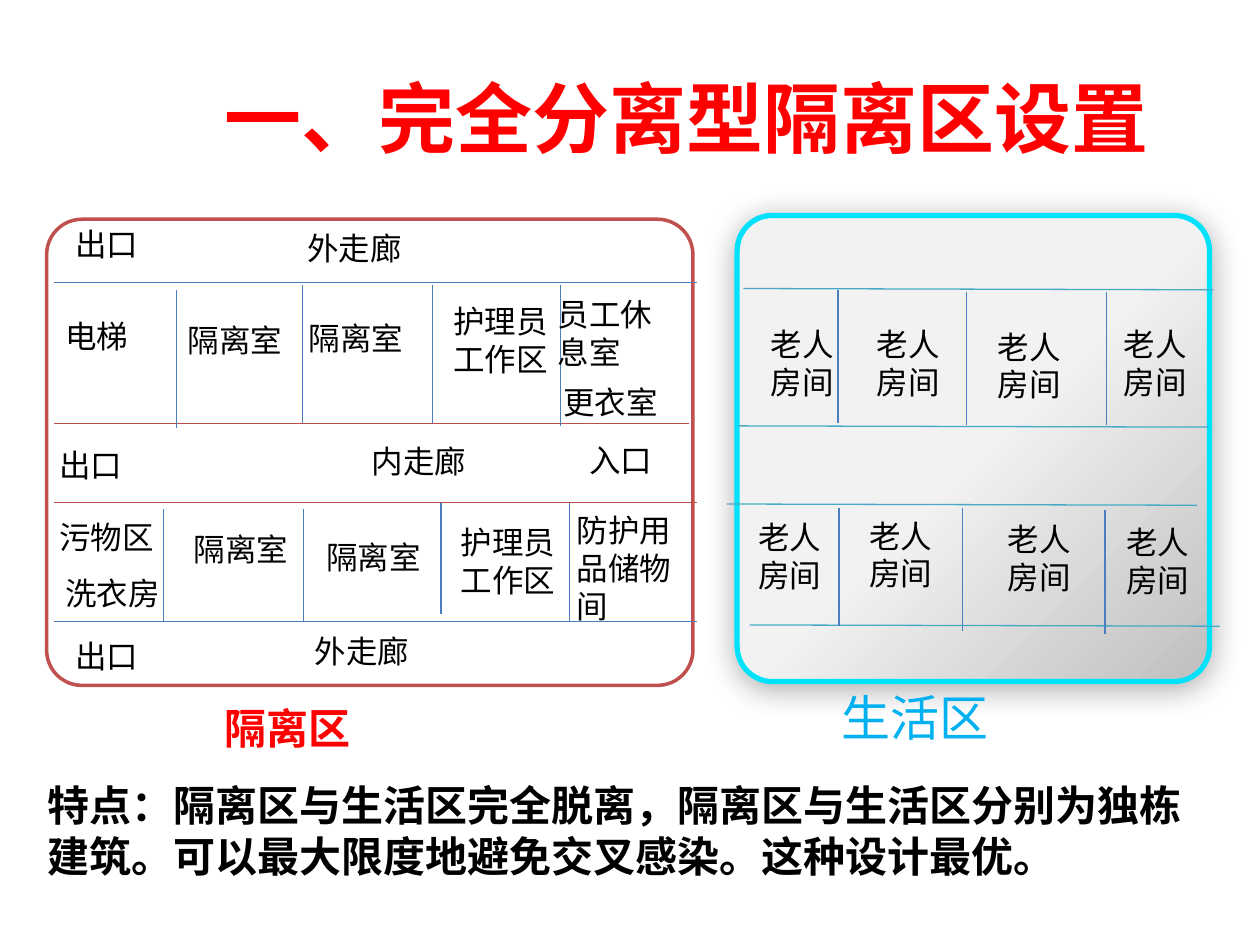
from dataclasses import dataclass
from typing import Any

from lxml.etree import SubElement
from pptx import Presentation
from pptx.dml.color import RGBColor
from pptx.enum.shapes import MSO_CONNECTOR, MSO_SHAPE
from pptx.enum.text import MSO_ANCHOR, MSO_AUTO_SIZE, PP_ALIGN
from pptx.oxml.ns import qn
from pptx.util import Inches, Length, Pt

COLUMNS, ROWS = 100, 75
SLIDE_WIDTH, SLIDE_HEIGHT = Inches(10), Inches(7.5)

BLACK = RGBColor(0x00, 0x00, 0x00)
WHITE = RGBColor(0xFF, 0xFF, 0xFF)
RED = RGBColor(0xFF, 0x00, 0x00)
SKY = RGBColor(0x00, 0xB0, 0xF0)
CYAN = RGBColor(0x00, 0xE1, 0xFB)
BRICK = RGBColor(0xC0, 0x50, 0x4D)
BRICK_WALL = RGBColor(0xBF, 0x4C, 0x48)
BLUE_WALL = RGBColor(0x4B, 0x7E, 0xBC)
TEAL_WALL = RGBColor(0x46, 0xAA, 0xC5)
PALE_GREY = RGBColor(0xF2, 0xF2, 0xF2)
MID_GREY = RGBColor(0xBF, 0xBF, 0xBF)


@dataclass(frozen=True)
class Label:
    """Text placed on the grid; a line break starts a new paragraph."""
    text: str
    column: float
    row: float
    width: float = 10.2
    height: float = 4
    size: float = 18
    color: RGBColor = BLACK
    bold: bool = False
    font: str = "Arial"


@dataclass(frozen=True)
class Wall:
    column: float
    row: float
    end_column: float
    end_row: float
    color: RGBColor = BLUE_WALL


@dataclass(frozen=True)
class Zone:
    column: float
    row: float
    width: float
    height: float
    border: RGBColor
    border_points: float


TITLE = Label("一、完全分离型隔离区设置", 14.1, 3, 80.9, 12.5, 44, RED, True, "Calibri")
FEATURES = Label(
    "特点：隔离区与生活区完全脱离，隔离区与生活区分别为独栋建筑。"
    "可以最大限度地避免交叉感染。这种设计最优。",
    2.8, 61.4, 93.2, 9.1, 24, BLACK, True)
ZONE_NAMES = [
    Label("生活区", 65.8, 54.1, 23.9, 5.7, 28, SKY),
    Label("隔离区", 16.8, 55.3, 23.9, 5, 24, RED, True),
]

LIVING = Zone(58.5, 17.1, 37.5, 37, CYAN, 3)
ISOLATION = Zone(3.7, 17.4, 51.3, 37, BRICK, 2)

ISOLATION_WALLS = [
    Wall(4.3, 33.6, 54.7, 33.6, BRICK_WALL),
    Wall(4.3, 39.9, 55.3, 39.9, BRICK_WALL),
    *(Wall(4.3, row, 55.3, row) for row in (22.4, 49.3)),
    *(Wall(column, top, column, bottom) for column, top, bottom in (
        (14, 23, 34), (24, 22.6, 33.6), (34.3, 22.6, 33.6), (44.5, 22.6, 33.8),
        (13, 40.4, 49.3), (24.1, 40.4, 49.3), (35, 39.9, 48.7), (45.2, 39.9, 49.3))),
]
ISOLATION_LABELS = [
    Label("出口", 5, 17.4),
    Label("外走廊", 23.4, 17.7),
    Label("电梯", 4.2, 24.7),
    Label("隔离室", 13.9, 25),
    Label("隔离室", 23.5, 24.8),
    Label("护理员工作区", 35, 23.5, height=7.1),
    Label("员工休息室", 43.3, 22.9, 11.7, 7.1),
    Label("更衣室", 43.7, 29.9),
    Label("出口", 3.7, 34.9),
    Label("内走廊", 28.5, 34.6),
    Label("入口", 45.8, 34.5),
    Label("污物区", 3.7, 40.6),
    Label("洗衣房", 4.2, 45.1),
    Label("隔离室", 14.4, 41.6),
    Label("隔离室", 24.9, 42.2),
    Label("护理员工作区", 35.6, 41, height=7.1),
    Label("防护用品储物间", 44.8, 40.1, height=10.1),
    Label("出口", 5, 50.1),
    Label("外走廊", 24, 49.7),
]

LIVING_WALLS = [
    *(Wall(column, row, column + 37.3, row + 0.1, TEAL_WALL) for column, row in (
        (59, 22.9), (58.6, 33.8), (57.7, 40), (59.5, 49.6))),
    *(Wall(column, top, column, bottom) for column, top, bottom in (
        (66.5, 23, 33.6), (76.7, 23.2, 33.7), (87.8, 23.2, 33.7),
        (66.6, 40.3, 49.7), (76.4, 40.3, 50.1), (87.7, 40.5, 50.3))),
]
LIVING_ROOMS = [
    Label("老人\n房间", column, row, 7.1, 7.1) for column, row in (
        (60.2, 25.3), (68.6, 25.3), (78.2, 25.5), (88.2, 25.3),
        (59.2, 40.6), (68, 40.5), (79, 40.8), (88.4, 41))
]


def across(columns: float) -> Length:
    return Length(round(SLIDE_WIDTH * columns / COLUMNS))


def down(rows: float) -> Length:
    return Length(round(SLIDE_HEIGHT * rows / ROWS))


def draw_label(shapes: Any, label: Label) -> Any:
    box = shapes.add_textbox(across(label.column), down(label.row),
                             across(label.width), down(label.height))
    frame = box.text_frame
    frame.word_wrap = True
    frame.auto_size = MSO_AUTO_SIZE.SHAPE_TO_FIT_TEXT
    for index, line in enumerate(label.text.split("\n")):
        paragraph = frame.add_paragraph() if index else frame.paragraphs[0]
        run = paragraph.add_run()
        run.text = line
        run.font.name = label.font
        run.font.size = Pt(label.size)
        run.font.bold = label.bold
        run.font.color.rgb = label.color
    return frame


def draw_wall(shapes: Any, wall: Wall) -> None:
    line = shapes.add_connector(MSO_CONNECTOR.STRAIGHT,
                                across(wall.column), down(wall.row),
                                across(wall.end_column), down(wall.end_row))
    line.line.color.rgb = wall.color
    line.line.width = Pt(0.75)
    SubElement(line._element.spPr, qn("a:effectLst"))


def draw_zone(shapes: Any, zone: Zone) -> Any:
    outline = shapes.add_shape(MSO_SHAPE.ROUNDED_RECTANGLE,
                               across(zone.column), down(zone.row),
                               across(zone.width), down(zone.height))
    outline.adjustments[0] = 0.076
    outline.shadow.inherit = False
    outline.fill.solid()
    outline.fill.fore_color.rgb = WHITE
    outline.line.color.rgb = zone.border
    outline.line.width = Pt(zone.border_points)
    return outline


def shade_zone(outline: Any) -> None:
    """Give the zone a diagonal grey gradient and a soft shadow."""
    fill = outline.fill
    fill.gradient()
    fill.gradient_angle = 315
    for stop, color, position in zip(fill.gradient_stops, (PALE_GREY, MID_GREY), (0.5, 1)):
        stop.color.rgb = color
        stop.position = position
    effects = outline._element.spPr.find(qn("a:effectLst"))
    shadow = SubElement(effects, qn("a:outerShdw"), blurRad=str(Pt(17.8)),
                        dist=str(Pt(3)), dir=str(87 * 60000), rotWithShape="0")
    shade = SubElement(shadow, qn("a:srgbClr"), val=str(BLACK))
    SubElement(shade, qn("a:alpha"), val="33000")


def main() -> None:
    deck = Presentation()
    deck.slide_width, deck.slide_height = SLIDE_WIDTH, SLIDE_HEIGHT
    shapes = deck.slides.add_slide(deck.slide_layouts[6]).shapes

    heading = draw_label(shapes, TITLE)
    heading.auto_size = MSO_AUTO_SIZE.NONE
    heading.vertical_anchor = MSO_ANCHOR.MIDDLE
    heading.paragraphs[0].alignment = PP_ALIGN.CENTER

    shade_zone(draw_zone(shapes, LIVING))
    draw_label(shapes, FEATURES)

    isolation_plan = shapes.add_group_shape().shapes
    draw_zone(isolation_plan, ISOLATION)
    for plan, walls, labels in ((isolation_plan, ISOLATION_WALLS, ISOLATION_LABELS),
                                (shapes, LIVING_WALLS, ZONE_NAMES + LIVING_ROOMS)):
        for wall in walls:
            draw_wall(plan, wall)
        for label in labels:
            draw_label(plan, label)

    deck.save("out.pptx")


if __name__ == "__main__":
    main()
